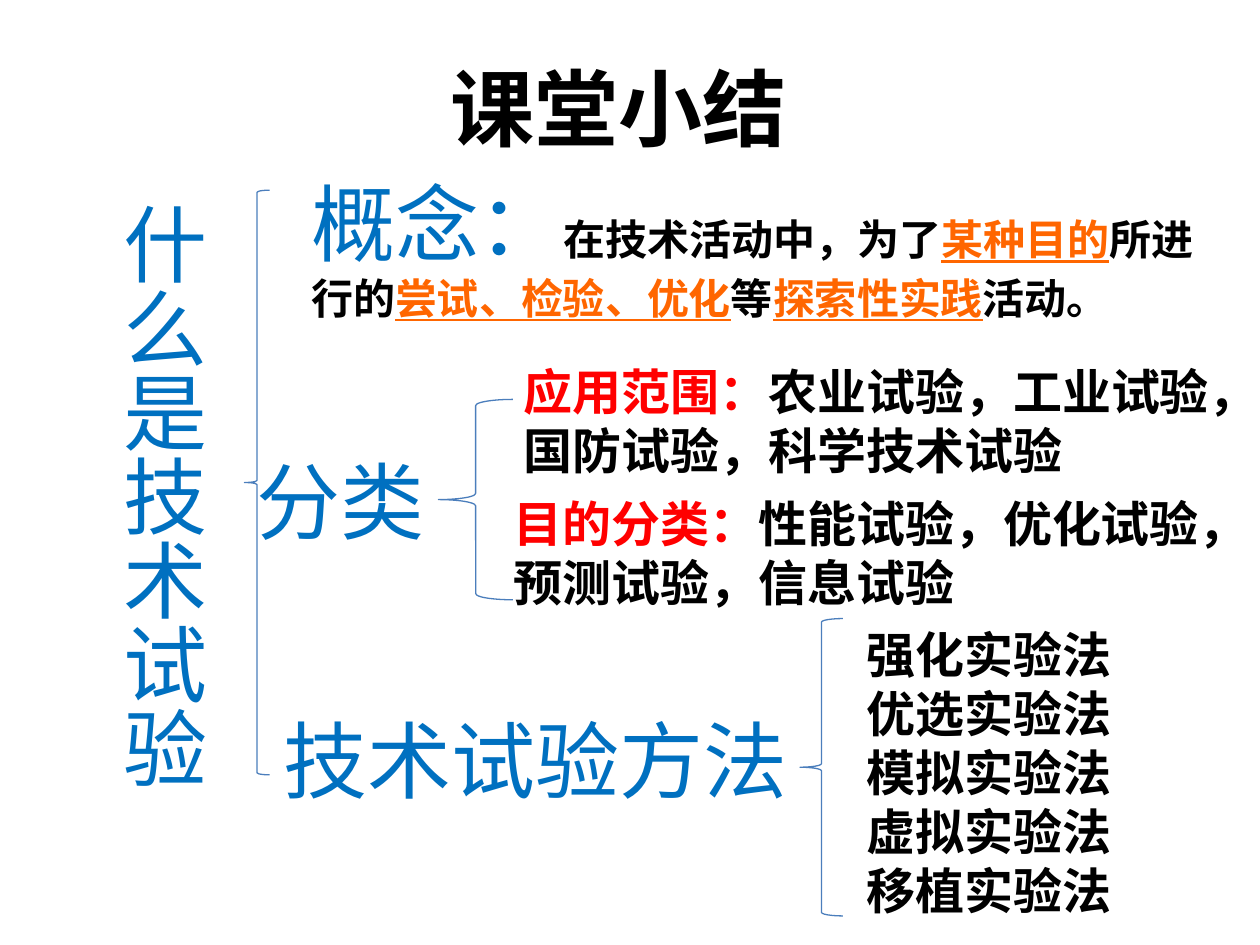
from lxml import etree
from pptx import Presentation
from pptx.dml.color import RGBColor
from pptx.enum.shapes import MSO_SHAPE
from pptx.enum.text import MSO_AUTO_SIZE
from pptx.oxml.ns import qn
from pptx.util import Inches, Pt

LEFT_BRACE = MSO_SHAPE.LEFT_BRACE
GROW = MSO_AUTO_SIZE.SHAPE_TO_FIT_TEXT
BLACK = RGBColor(0x00, 0x00, 0x00)
BLUE = RGBColor(0x00, 0x70, 0xC0)
ORANGE = RGBColor(0xFF, 0x66, 0x00)
RED = RGBColor(0xFF, 0x00, 0x00)
BRACE_BLUE = RGBColor(0x4B, 0x7E, 0xBC)
SC, JP, SANS = "Noto Sans CJK SC", "Noto Sans CJK JP", "DejaVu Sans"

# Style: size, typeface, colour, bold, underline
TITLE = (48, SC, BLACK, True, False)
TOPIC = (48, SC, BLUE, False, False)
BODY = (24, JP, BLACK, True, False)
KEYWORD = (24, JP, ORANGE, True, True)
LABEL = (28, SANS, RED, True, False)
KINDS = (28, SANS, BLACK, True, False)
METHOD = (28, SC, BLACK, True, False)

# Box: left, top, width, height; wrapped; vertical; paragraphs of (text, style)
TEXTS = [
    ((3.48, 0.4, 2.89, 0.91), False, False, [[("课堂小结", TITLE)]]),
    ((0.73, 1.51, 1.01, 4.77), False, True, [[("什么是技术试验", TOPIC)]]),
    ((2.37, 1.31, 7.38, 1.31), True, False, [[
        ("概念：", TOPIC),
        ("在技术活动中，为了", BODY),
        ("某种目的", KEYWORD),
        ("所进行的", BODY),
        ("尝试、检验、优化", KEYWORD),
        ("等", BODY),
        ("探索性实践", KEYWORD),
        ("活动。", BODY),
    ]]),
    ((1.94, 3.52, 1.53, 0.91), False, False, [[("分类", TOPIC)]]),
    ((4.06, 2.82, 5.69, 1.04), True, False, [[
        ("应用范围：", LABEL),
        ("农业试验，工业试验，国防试验，科学技术试验", KINDS),
    ]]),
    ((3.98, 3.87, 5.86, 1.04), True, False, [[
        ("目的分类：", LABEL),
        ("性能试验，优化试验，预测试验，信息试验", KINDS),
    ]]),
    ((2.15, 5.57, 4.2, 0.91), False, False, [[("技术试验方法", TOPIC)]]),
    ((6.78, 4.91, 2.42, 2.46), True, False, [
        [(name, METHOD)] for name in
        ("强化实验法优选实验法", "模拟实验法", "虚拟实验法", "移植实验法")
    ]),
]
BRACES = [
    (1.94, 1.51, 0.2, 4.64),
    (3.48, 3.17, 0.59, 1.59),
    (6.35, 4.91, 0.34, 2.36),
]


def apply_style(font, style):
    size, typeface, colour, bold, underline = style
    font.size = Pt(size)
    font.bold = bold
    font.underline = underline
    font.color.rgb = colour
    font.name = typeface
    east_asian = etree.SubElement(font._element, qn("a:ea"))
    east_asian.set("typeface", typeface)


def add_text(slide, box, wrapped, vertical, paragraphs):
    frame = slide.shapes.add_textbox(*map(Inches, box)).text_frame
    frame.word_wrap = wrapped
    frame.auto_size = GROW
    if vertical:
        frame._txBody.bodyPr.set("vert", "eaVert")
    for index, pieces in enumerate(paragraphs):
        paragraph = frame.add_paragraph() if index else frame.paragraphs[0]
        if len(pieces) == 1:
            apply_style(paragraph.font, pieces[0][1])
        for text, style in pieces:
            run = paragraph.add_run()
            run.text = text
            if len(pieces) > 1:
                apply_style(run.font, style)


def add_brace(slide, box):
    brace = slide.shapes.add_shape(LEFT_BRACE, *map(Inches, box))
    brace.shadow.inherit = False
    brace.fill.background()
    brace.line.color.rgb = BRACE_BLUE
    brace.line.width = Pt(0.75)


def main():
    deck = Presentation()
    deck.slide_width, deck.slide_height = Inches(10), Inches(7.5)
    slide = deck.slides.add_slide(deck.slide_layouts[6])
    for box in BRACES:
        add_brace(slide, box)
    for text in TEXTS:
        add_text(slide, *text)
    deck.save("out.pptx")


if __name__ == "__main__":
    main()
